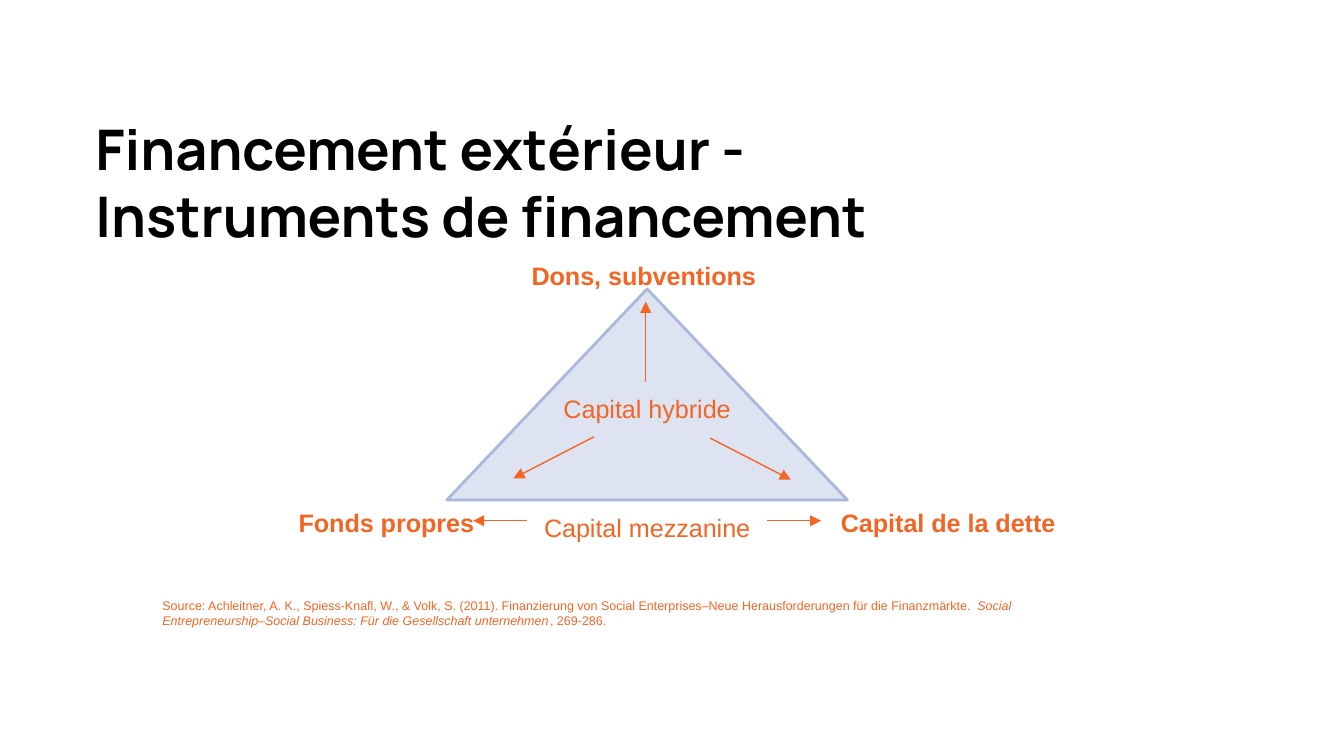
from pptx import Presentation
from pptx.dml.color import RGBColor
from pptx.enum.shapes import MSO_CONNECTOR, MSO_SHAPE
from pptx.enum.text import MSO_ANCHOR, PP_ALIGN
from pptx.oxml.ns import qn
from pptx.util import Inches, Pt
from lxml import etree

TRIANGLE, STRAIGHT = MSO_SHAPE.ISOSCELES_TRIANGLE, MSO_CONNECTOR.STRAIGHT
TOP, LEFT, CENTER = MSO_ANCHOR.TOP, PP_ALIGN.LEFT, PP_ALIGN.CENTER
THEME = {
    "title": RGBColor(0x00, 0x00, 0x00),
    "accent": RGBColor(0xF4, 0x65, 0x24),
    "fill": RGBColor(0xDD, 0xE3, 0xF1),
    "edge": RGBColor(0xAA, 0xB8, 0xDB),
    "title_font": "Manrope", "body_font": "Arial",
    "title_size": 30, "label_size": 13.5, "source_size": 6.75,
}

# Widescreen page, 16 to 9
deck = Presentation()
deck.slide_width = Inches(10)
deck.slide_height = deck.slide_width * 9 // 16
page = deck.slides.add_slide(deck.slide_layouts[5])


def grid(*cells):
    """Turn square cells, 100 to the slide width, into lengths."""
    return [round(cell * deck.slide_width / 100) for cell in cells]


def style(span, font, size, color, bold=False, italic=False):
    span.font.name, span.font.size = font, Pt(size)
    span.font.color.rgb = color
    span.font.bold, span.font.italic = bold, italic


# Title
title = page.shapes.title
title.left, title.top, title.width, title.height = grid(7.1, 8.5, 73.3, 2.3)
frame = title.text_frame
frame.margin_left = frame.margin_right = frame.margin_top = frame.margin_bottom = 0
frame.vertical_anchor, frame.word_wrap = TOP, True
frame.text = "Financement extérieur - Instruments de financement"
para = frame.paragraphs[0]
para.alignment, para.line_spacing = LEFT, 1.0
style(para.runs[0], THEME["title_font"], THEME["title_size"], THEME["title"], bold=True)

# Triangle of capital types
triangle = page.shapes.add_shape(TRIANGLE, *grid(33.25, 21.5, 29.8, 15.7))
triangle.shadow.inherit = False
triangle.fill.solid()
triangle.fill.fore_color.rgb = THEME["fill"]
triangle.line.color.rgb = THEME["edge"]
triangle.line.width = Pt(1.5)

# Labels at the corners (bold) and between them
labels = [
    ("Dons, subventions", 38.45, 18.85, 18.9, True),
    ("Fonds propres", 19.3, 37.25, 18.9, True),
    ("Capital de la dette", 61.1, 37.25, 18.9, True),
    ("Capital mezzanine", 38.2, 37.6, 19.9, False),
    ("Capital hybride", 38.7, 28.8, 18.9, False),
]
for text, left, top, width, bold in labels:
    box = page.shapes.add_textbox(*grid(left, top, width, 3.3))
    box.text_frame.word_wrap = True
    box.text_frame.text = text
    para = box.text_frame.paragraphs[0]
    para.alignment = CENTER
    style(para.runs[0], THEME["body_font"], THEME["label_size"], THEME["accent"], bold)

# Arrows from the mixed forms towards the corners
arrows = [
    (39.2, 38.75, 35.2, 38.75),
    (57.1, 38.75, 61.1, 38.75),
    (44.2, 32.5, 38.2, 35.6),
    (52.85, 32.6, 58.85, 35.7),
    (48.05, 28.4, 48.05, 22.45),
]
for ends in arrows:
    arrow = page.shapes.add_connector(STRAIGHT, *grid(*ends))
    arrow.line.color.rgb = THEME["accent"]
    arrow.line.width = Pt(0.75)
    etree.SubElement(arrow.line._get_or_add_ln(), qn("a:tailEnd"), type="triangle")
    etree.SubElement(arrow._element.spPr, qn("a:effectLst"))

# Source note
note = page.shapes.add_textbox(*grid(11.1, 44, 68.5, 3.3))
note.text_frame.word_wrap = True
para = note.text_frame.paragraphs[0]
for text, italic in [
    ("Source: Achleitner, A. K., Spiess-Knafl, W., & Volk, S. (2011). Finanzierung von "
     "Social Enterprises–Neue Herausforderungen für die Finanzmärkte. ", False),
    ("Social Entrepreneurship–Social Business: Für die Gesellschaft unternehmen", True),
    (", 269-286.", False),
]:
    span = para.add_run()
    span.text = text
    style(span, THEME["body_font"], THEME["source_size"], THEME["accent"], italic=italic)

deck.save("out.pptx")
